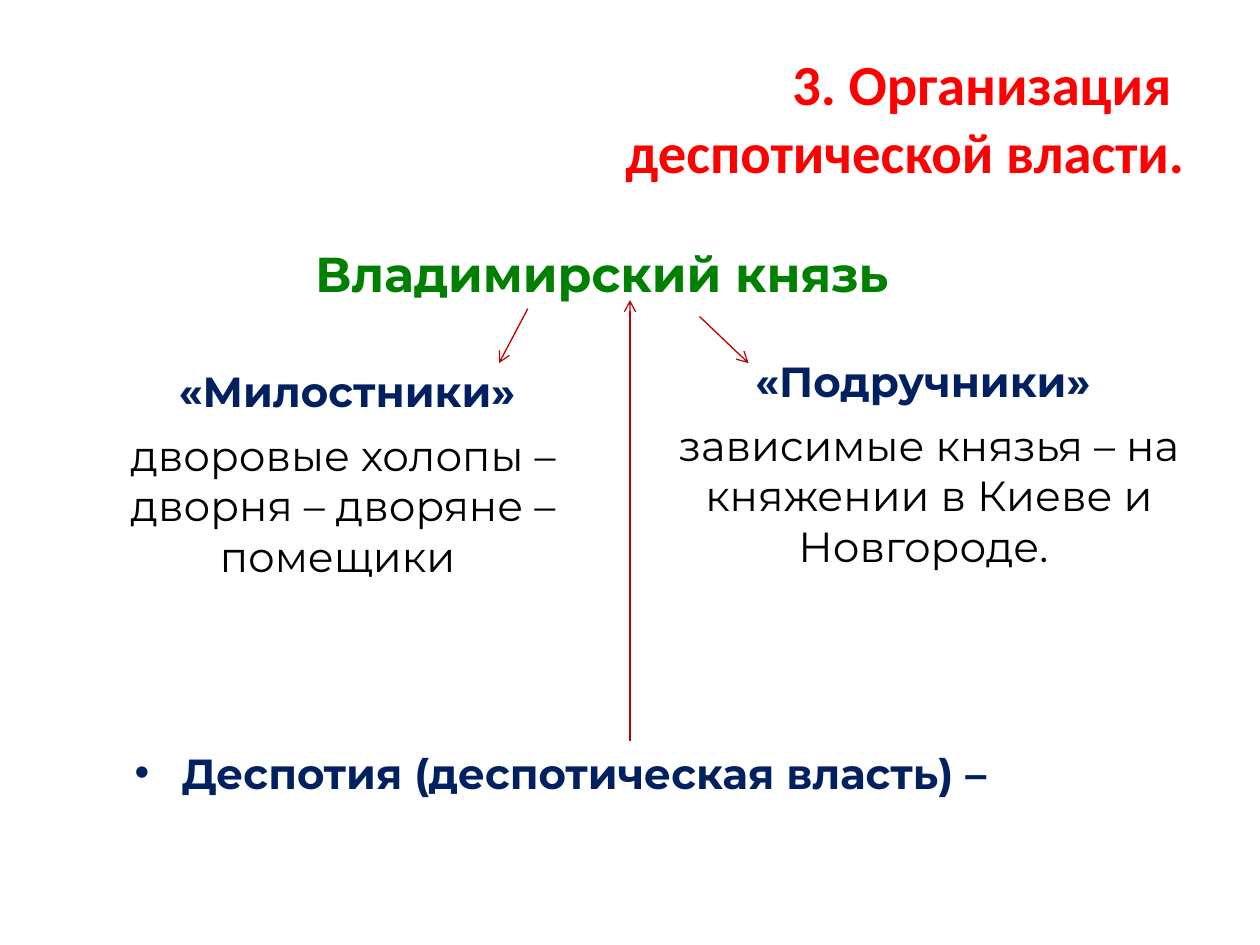
from dataclasses import dataclass

from lxml import etree
from pptx import Presentation
from pptx.dml.color import RGBColor
from pptx.enum.shapes import MSO_CONNECTOR
from pptx.enum.text import MSO_ANCHOR, MSO_AUTO_SIZE, PP_ALIGN
from pptx.oxml.ns import qn
from pptx.slide import Slide
from pptx.util import Cm, Pt

TOP, MIDDLE, BOTTOM = MSO_ANCHOR.TOP, MSO_ANCHOR.MIDDLE, MSO_ANCHOR.BOTTOM
CENTER, RIGHT = PP_ALIGN.CENTER, PP_ALIGN.RIGHT
STRAIGHT = MSO_CONNECTOR.STRAIGHT
NO_AUTO_SIZE, GROW = MSO_AUTO_SIZE.NONE, MSO_AUTO_SIZE.SHAPE_TO_FIT_TEXT

COLORS = {
    "title": "FF0000",
    "prince": "008000",
    "heading": "002060",
    "body": "000000",
    "arrow": "C00000",
}
FORMATS = {
    "title": {"name": "Calibri", "size": Pt(32.4), "bold": True},
    "prince": {"name": "Montserrat", "size": Pt(28), "bold": True},
    "heading": {"name": "Montserrat", "size": Pt(24), "bold": True},
    "body": {"name": "Montserrat", "size": Pt(24), "bold": False},
}


@dataclass
class TextBlock:
    """Text with its box in centimetres; a vertical tab breaks the line."""
    text: str
    style: str
    left: float
    top: float
    width: float
    height: float
    anchor: MSO_ANCHOR = TOP
    alignment: PP_ALIGN = CENTER
    wrap: bool = True
    auto_size: MSO_AUTO_SIZE = NO_AUTO_SIZE
    bullet: bool = False


@dataclass
class Arrow:
    """Arrow from its start to its tip, in centimetres."""
    start_x: float
    start_y: float
    tip_x: float
    tip_y: float


TEXT_BLOCKS = [
    TextBlock("3. Организация \vдеспотической власти.", "title",
              1.27, 0.76, 22.86, 3.18, MIDDLE, RIGHT),
    # Left column
    TextBlock("«Милостники» ", "heading", 1.5, 6.73, 11.23, 1.78, BOTTOM),
    TextBlock("дворовые холопы – дворня – дворяне – помещики ", "body",
              1.3, 8.53, 11.23, 5.08),
    # Right column
    TextBlock("«Подручники» ", "heading", 13.11, 6.53, 11.23, 1.78, BOTTOM),
    TextBlock("зависимые князья – на княжении в Киеве и Новгороде. ", "body",
              13.11, 8.33, 11.23, 5.28),
    # Definition and the head of the scheme
    TextBlock("Деспотия (деспотическая власть) –", "heading",
              1.9, 14.94, 18.8, 1.27, auto_size=GROW, bullet=True),
    TextBlock("Владимирский князь ", "prince", 5.82, 4.78, 12.9, 1.45,
              wrap=False, auto_size=GROW),
]
ARROWS = [
    Arrow(10.64, 6.22, 10.06, 7.32),
    Arrow(14.1, 6.38, 15.09, 7.32),
    Arrow(12.7, 14.94, 12.7, 6.05),
]


def add_bullet(paragraph) -> None:
    properties = paragraph._p.get_or_add_pPr()
    indent = Cm(0.95)
    properties.set("marL", str(indent))
    properties.set("indent", str(-indent))
    etree.SubElement(properties, qn("a:buFont"), typeface="Arial")
    etree.SubElement(properties, qn("a:buChar"), char="•")


def draw_text(slide: Slide, block: TextBlock) -> None:
    shape = slide.shapes.add_textbox(
        Cm(block.left), Cm(block.top), Cm(block.width), Cm(block.height))
    frame = shape.text_frame
    frame.word_wrap = block.wrap
    frame.auto_size = block.auto_size
    frame.vertical_anchor = block.anchor
    paragraph = frame.paragraphs[0]
    paragraph.text = block.text
    if block.bullet:
        add_bullet(paragraph)
    paragraph.alignment = block.alignment
    for run in paragraph.runs:
        for attribute, value in FORMATS[block.style].items():
            setattr(run.font, attribute, value)
        run.font.color.rgb = RGBColor.from_string(COLORS[block.style])


def draw_arrow(slide: Slide, arrow: Arrow) -> None:
    connector = slide.shapes.add_connector(
        STRAIGHT, Cm(arrow.start_x), Cm(arrow.start_y),
        Cm(arrow.tip_x), Cm(arrow.tip_y))
    connector.line.width = Pt(0.75)
    connector.line.color.rgb = RGBColor.from_string(COLORS["arrow"])
    etree.SubElement(connector.line._get_or_add_ln(), qn("a:tailEnd"),
                     type="arrow")
    etree.SubElement(connector._element.spPr, qn("a:effectLst"))


def main() -> None:
    presentation = Presentation()
    presentation.slide_width = Cm(25.4)
    presentation.slide_height = Cm(19.05)
    slide = presentation.slides.add_slide(presentation.slide_layouts[6])
    for block in TEXT_BLOCKS:
        draw_text(slide, block)
    for arrow in ARROWS:
        draw_arrow(slide, arrow)
    presentation.save("out.pptx")


if __name__ == "__main__":
    main()
